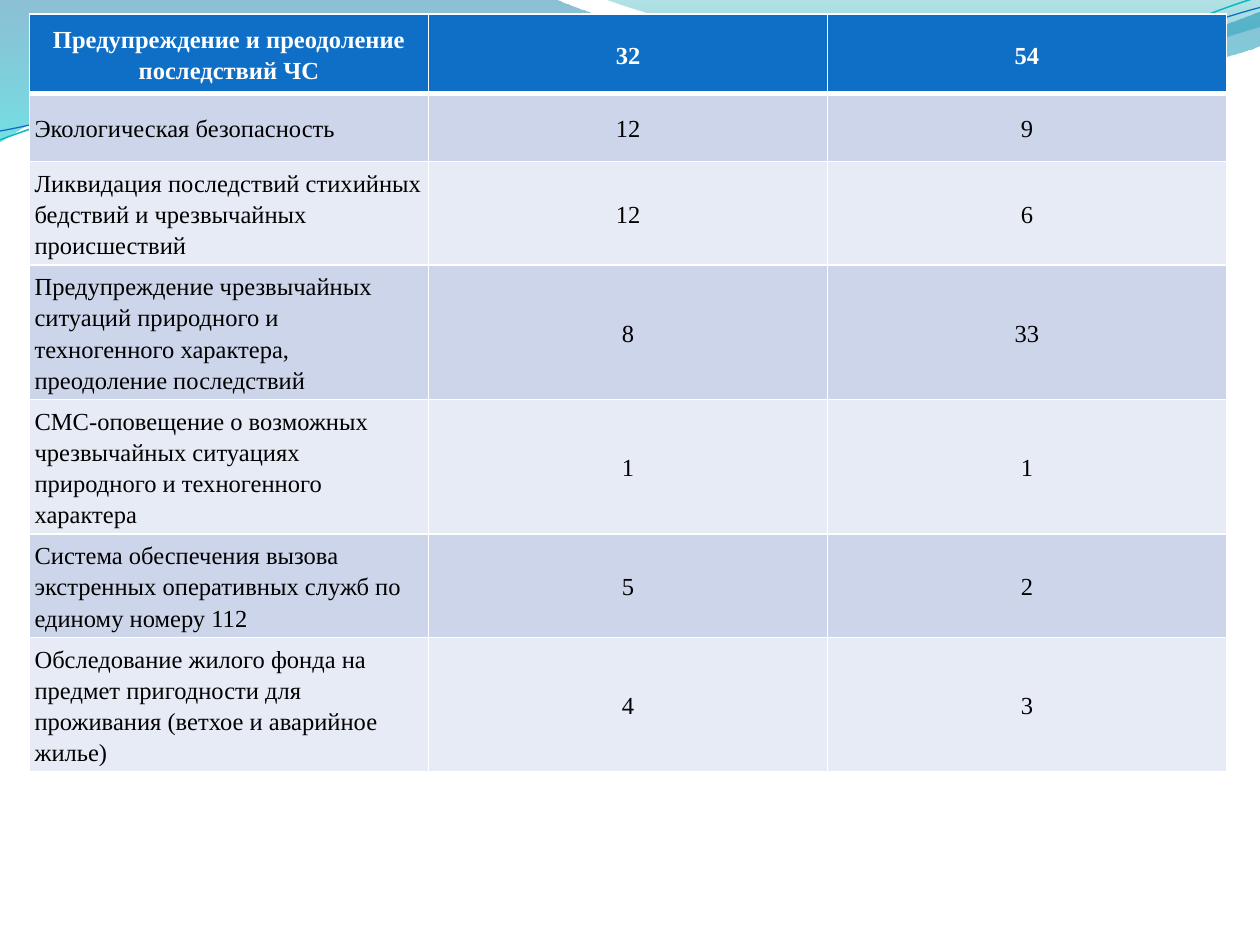
from dataclasses import dataclass
from math import cos, radians, sin
from typing import NamedTuple, Optional

from lxml.etree import SubElement
from pptx import Presentation
from pptx.dml.color import RGBColor as RGB
from pptx.enum.text import MSO_ANCHOR as Anchor, PP_ALIGN as Align
from pptx.oxml.ns import qn
from pptx.util import Inches, Pt

WIDTH, HEIGHT = 10, 7.5


@dataclass(frozen=True)
class Theme:
    font: str = "Times New Roman"
    size: float = 14
    spacing: float = 1.15
    inset: float = 0.04
    header: str = "0F6FC6"
    header_text: str = "FFFFFF"
    body_text: str = "000000"
    border: str = "FFFFFF"
    bands: tuple[str, str] = ("CCD5EA", "E7EBF5")


class Stop(NamedTuple):
    position: float
    color: str
    opacity: int


@dataclass(frozen=True)
class Wave:
    start: tuple[float, float]
    segments: tuple[tuple[float, ...], ...]
    stops: tuple[Stop, ...] = ()
    line: Optional[str] = None
    width: float = 0
    tilt: float = 0
    center: tuple[float, float] = (0, 0)


class Row(NamedTuple):
    name: str
    first: str
    second: str
    height: float


THEME = Theme()

WAVES = (
    Wave((0, 0), ((4.4, -0.01), (4.76, 0.17, 6.64, 0.63, 7.58, 0.63),
                  (8.53, 0.63, 9.58, 0.26, 10, 0.09), (10.01, 0.36),
                  (9.83, 0.44, 8.7, 0.76, 7.46, 0.75),
                  (6.22, 0.75, 3.82, 0.28, 2.57, 0.34),
                  (1.29, 0.36, 0.46, 0.83, -0.01, 1.13), (0, 0)),
         stops=(Stop(0, "0074A1", 45), Stop(1, "00C6CF", 55))),
    Wave((4.79, -0.01), ((5.09, 0.11, 6.82, 0.62, 7.69, 0.65),
                         (8.56, 0.69, 9.61, 0.32, 10, 0.21), (10, 0), (4.79, -0.01)),
         stops=(Stop(0, "00A1A9", 30), Stop(0.8, "008BBF", 45))),
    Wave((0, 1.11), ((0.48, 0.93, 1.58, 0.57, 2.77, 0.52),
                     (3.95, 0.47, 5.93, 0.89, 7.13, 0.8),
                     (8.33, 0.71, 9.38, 0.15, 9.98, -0.02)),
         line="0AB8BF", width=0.85, tilt=-2.7, center=(4.99, 0.58)),
    Wave((0, 1.04), ((0.47, 0.96, 1.64, 0.61, 2.83, 0.56),
                     (4.03, 0.51, 5.97, 0.84, 7.17, 0.75),
                     (8.36, 0.67, 9.41, 0.21, 10, 0.06)),
         line="0F6FC6", width=0.75, tilt=-2.7, center=(5, 0.59)),
)

ROWS = (
    Row("Предупреждение и преодоление последствий ЧС", "32", "54", 0.63),
    Row("Экологическая безопасность", "12", "9", 0.54),
    Row("Ликвидация последствий стихийных бедствий и чрезвычайных происшествий",
        "12", "6", 0.63),
    Row("Предупреждение чрезвычайных ситуаций природного и техногенного характера, "
        "преодоление последствий", "8", "33", 0.88),
    Row("СМС-оповещение о возможных чрезвычайных ситуациях природного и "
        "техногенного характера", "1", "1", 0.63),
    Row("Система обеспечения вызова экстренных оперативных служб по единому номеру 112",
        "5", "2", 0.63),
    Row("Обследование жилого фонда на предмет пригодности для проживания "
        "(ветхое и аварийное жилье)", "4", "3", 0.7),
)


def level(wave: Wave, x: float, y: float) -> tuple[int, int]:
    angle, (cx, cy) = radians(-wave.tilt), wave.center
    dx, dy = x - cx, y - cy
    return (Inches(cx + dx * cos(angle) - dy * sin(angle)),
            Inches(cy + dx * sin(angle) + dy * cos(angle)))


def curve_segments(sp, wave: Wave) -> None:
    nodes = iter(list(sp.element.iter(qn("a:lnTo"))))
    for segment in wave.segments:
        node = next(nodes)
        if len(segment) == 2:
            continue
        curve = node.makeelement(qn("a:cubicBezTo"))
        node.addprevious(curve)
        for part in (node, next(nodes), next(nodes)):
            curve.append(part[0])
            part.getparent().remove(part)


def draw_wave(s, wave: Wave) -> None:
    points = [level(wave, *segment[i:i + 2])
              for segment in wave.segments for i in range(0, len(segment), 2)]
    builder = s.shapes.build_freeform(*level(wave, *wave.start))
    builder.add_line_segments(points, close=bool(wave.stops))
    sp = builder.convert_to_shape()
    curve_segments(sp, wave)
    sp.rotation = wave.tilt
    sp.shadow.inherit = False
    if wave.line:
        sp.fill.background()
        sp.line.color.rgb = RGB.from_string(wave.line)
        sp.line.width = Pt(wave.width)
        return
    sp.line.fill.background()
    sp.fill.gradient()
    sp.fill.gradient_angle = 270
    for target, stop in zip(sp.fill.gradient_stops, wave.stops):
        target.position = stop.position
        target.color.rgb = RGB.from_string(stop.color)
    for color, stop in zip(sp.element.spPr.iter(qn("a:srgbClr")), wave.stops):
        SubElement(color, qn("a:alpha"), val=str(stop.opacity * 1000))


def add_borders(cell, bottom: float) -> None:
    tc_pr = cell._tc.get_or_add_tcPr()
    for side, width in (("L", 1), ("R", 1), ("T", 1), ("B", bottom)):
        line = SubElement(tc_pr, qn(f"a:ln{side}"), w=str(Pt(width)))
        fill = SubElement(line, qn("a:solidFill"))
        SubElement(fill, qn("a:srgbClr"), val=THEME.border)


def format_cell(cell, text: str, fill: str, color: str, bold: bool, align: Align) -> None:
    cell.text = text
    cell.vertical_anchor = Anchor.MIDDLE
    cell.margin_left = cell.margin_right = Inches(THEME.inset)
    cell.margin_top = cell.margin_bottom = Inches(THEME.inset)
    cell.fill.solid()
    cell.fill.fore_color.rgb = RGB.from_string(fill)
    p = cell.text_frame.paragraphs[0]
    p.alignment = align
    p.line_spacing = THEME.spacing
    p.font.name = THEME.font
    p.font.size = Pt(THEME.size)
    p.font.bold = bold
    p.font.color.rgb = RGB.from_string(color)


def draw_table(s, rows: tuple[Row, ...]) -> None:
    height = Inches(6.42)
    frame = s.shapes.add_table(len(rows), 3, Pt(16.9), Pt(8.1),
                               Inches(0.95 * WIDTH), height)
    table = frame.table
    for i, row in enumerate(rows):
        table.rows[i].height = Inches(row.height)
        header = i == 0
        fill = THEME.header if header else THEME.bands[(i - 1) % 2]
        color = THEME.header_text if header else THEME.body_text
        for j, text in enumerate((row.name, row.first, row.second)):
            cell = table.cell(i, j)
            if header:
                add_borders(cell, 3)
            align = Align.CENTER if header or j else Align.LEFT
            format_cell(cell, text, fill, color, header, align)
    frame.height = height


def main() -> None:
    prs = Presentation()
    prs.slide_width, prs.slide_height = Inches(WIDTH), Inches(HEIGHT)
    s = prs.slides.add_slide(prs.slide_layouts[6])
    for wave in WAVES:
        draw_wave(s, wave)
    draw_table(s, ROWS)
    prs.save("out.pptx")


if __name__ == "__main__":
    main()
